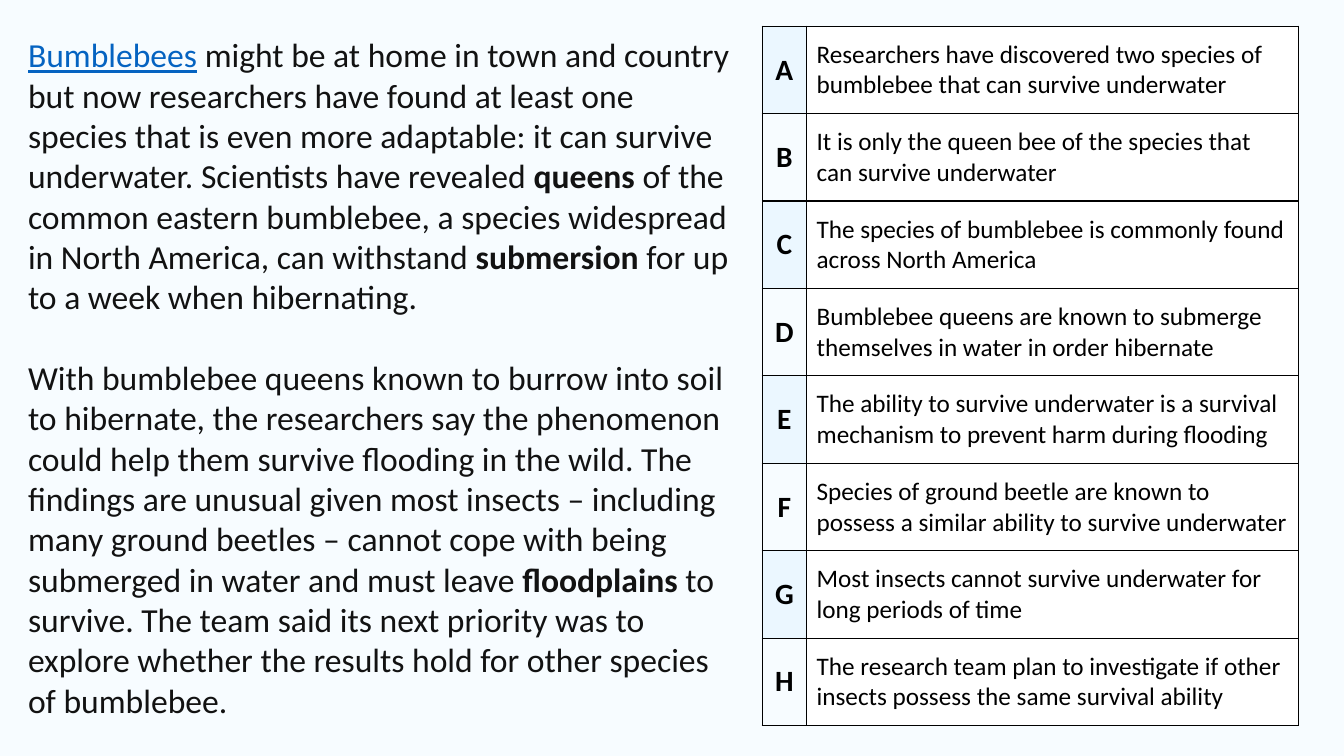
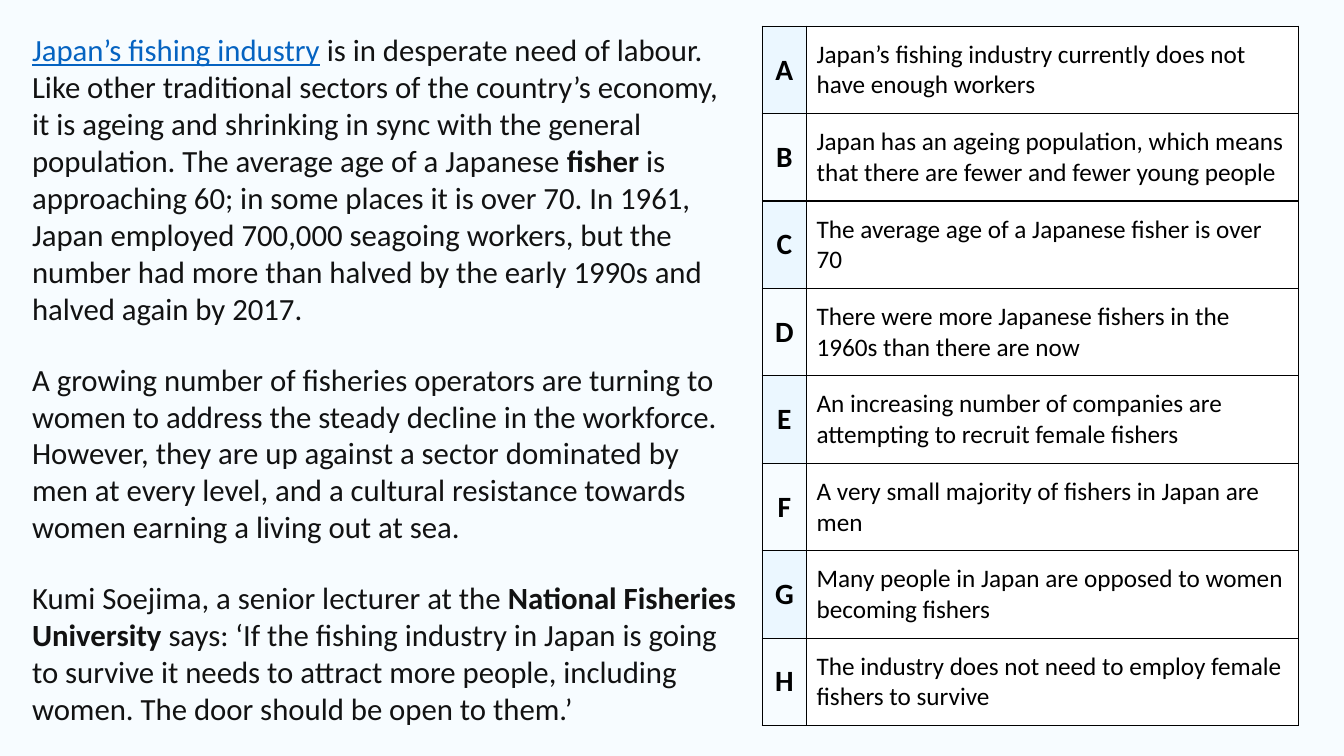
from lxml.etree import SubElement as Sub
from pptx import Presentation as Deck
from pptx.dml.color import RGBColor as Rgb
from pptx.enum.text import MSO_ANCHOR as Anchor, MSO_AUTO_SIZE as Auto, PP_ALIGN as Align
from pptx.oxml.ns import qn
from pptx.util import Inches, Pt

HUES = {
    "page": "F7FCFF",
    "tint": "EBF7FF",
    "white": "FFFFFF",
    "black": "000000",
    "ink": "121212",
    "link": "0563C1",
}

BEES = [
    " might be at home in town and country but now researchers have found at least one species "
    "that is even more adaptable: it can survive underwater. Scientists have revealed *queens* "
    "of the common eastern bumblebee, a species widespread in North America, can withstand "
    "*submersion* for up to a week when hibernating.",
    "With bumblebee queens known to burrow into soil to hibernate, the researchers say the "
    "phenomenon could help them survive flooding in the wild. The findings are unusual given "
    "most insects – including many ground beetles – cannot cope with being submerged in water "
    "and must leave *floodplains* to survive. The team said its next priority was to explore "
    "whether the results hold for other species of bumblebee.",
]
BEE_CLAIMS = [
    "Researchers have discovered two species of bumblebee that can survive underwater",
    "It is only the queen bee of the species that can survive underwater",
    "The species of bumblebee is commonly found across North America",
    "Bumblebee queens are known to submerge themselves in water in order hibernate",
    "The ability to survive underwater is a survival mechanism to prevent harm during flooding",
    "Species of ground beetle are known to possess a similar ability to survive underwater",
    "Most insects cannot survive underwater for long periods of time",
    "The research team plan to investigate if other insects possess the same survival ability",
]
FISH = [
    " is in desperate need of labour. Like other traditional sectors of the country’s economy, "
    "it is ageing and shrinking in sync with the general population. The average age of a "
    "Japanese *fisher* is approaching 60; in some places it is over 70. In 1961, Japan employed "
    "700,000 seagoing workers, but the number had more than halved by the early 1990s and "
    "halved again by 2017.",
    "A growing number of fisheries operators are turning to women to address the steady decline "
    "in the workforce. However, they are up against a sector dominated by men at every level, "
    "and a cultural resistance towards women earning a living out at sea.",
    "Kumi Soejima, a senior lecturer at the *National Fisheries University *says: ‘If the "
    "fishing industry in Japan is going to survive it needs to attract more people, including "
    "women. The door should be open to them.’",
]
FISH_CLAIMS = [
    "Japan’s fishing industry currently does not have enough workers",
    "Japan has an ageing population, which means that there are fewer and fewer young people",
    "The average age of a Japanese fisher is over 70",
    "There were more Japanese fishers in the 1960s than there are now",
    "An increasing number of companies are attempting to recruit female fishers",
    "A very small majority of fishers in Japan are men",
    "Many people in Japan are opposed to women becoming fishers",
    "The industry does not need to employ female fishers to survive",
]


class Quiz:
    face = "Calibri"

    def __init__(self):
        self.deck = Deck()
        self.deck.slide_width = Inches(13.33)
        self.deck.slide_height = Inches(7.5)
        self.slide = None

    def hue(self, name):
        return Rgb.from_string(HUES[name])

    def page(self):
        self.slide = self.deck.slides.add_slide(self.deck.slide_layouts[6])
        fill = self.slide.background.fill
        fill.solid()
        fill.fore_color.rgb = self.hue("page")

    def style(self, para, size, hue, bold=False):
        font = para.font
        font.name, font.size, font.bold = self.face, Pt(size), bold
        font.color.rgb = self.hue(hue)

    def story(self, box, size, gap, lead, texts):
        frame = self.slide.shapes.add_textbox(*map(Inches, box)).text_frame
        frame.word_wrap = True
        frame.auto_size = Auto.SHAPE_TO_FIT_TEXT
        for row, text in enumerate(texts):
            para = frame.add_paragraph() if row else frame.paragraphs[0]
            self.style(para, size, "ink")
            if row:
                para.space_before = Pt(gap)
            else:
                run = para.add_run()
                run.text = lead
                run.font.underline = True
                run.font.color.rgb = self.hue("link")
            for spot, part in enumerate(text.split("*")):
                run = para.add_run()
                run.text = part
                if spot % 2:
                    run.font.bold = True

    def edge(self, cell):
        props = cell._tc.get_or_add_tcPr()
        for spot, side in enumerate(("lnL", "lnR", "lnT", "lnB")):
            line = props.makeelement(qn(f"a:{side}"), {"w": str(Pt(1))})
            fill = Sub(line, qn("a:solidFill"))
            Sub(fill, qn("a:srgbClr"), val=HUES["black"])
            props.insert(spot, line)

    def cell(self, cell, text, size, fill, bold=False):
        cell.fill.solid()
        cell.fill.fore_color.rgb = self.hue(fill)
        cell.vertical_anchor = Anchor.MIDDLE
        cell.text = text
        para = cell.text_frame.paragraphs[0]
        para.alignment = Align.CENTER if bold else Align.LEFT
        self.style(para, size, "black", bold)
        self.edge(cell)

    def claims(self, texts):
        box = map(Inches, (7.56, 0.26, 5.32, 6.94))
        table = self.slide.shapes.add_table(len(texts), 2, *box).table
        table.first_row = table.horz_banding = False
        for col, wide in zip(table.columns, (0.44, 4.88)):
            col.width = Inches(wide)
        for row, text in enumerate(texts):
            tint = "page" if row % 2 else "tint"
            self.cell(table.cell(row, 0), "ABCDEFGH"[row], 21, tint, True)
            self.cell(table.cell(row, 1), text, 18, "white")


def main():
    quiz = Quiz()
    quiz.page()
    quiz.story((0.18, 0.29, 7.2, 6.97), 24, 29, "Bumblebees", BEES)
    quiz.claims(BEE_CLAIMS)
    quiz.page()
    quiz.story((0.22, 0.26, 7.2, 7.14), 22, 24, "Japan’s fishing industry", FISH)
    quiz.claims(FISH_CLAIMS)
    quiz.deck.save("out.pptx")


if __name__ == "__main__":
    main()
